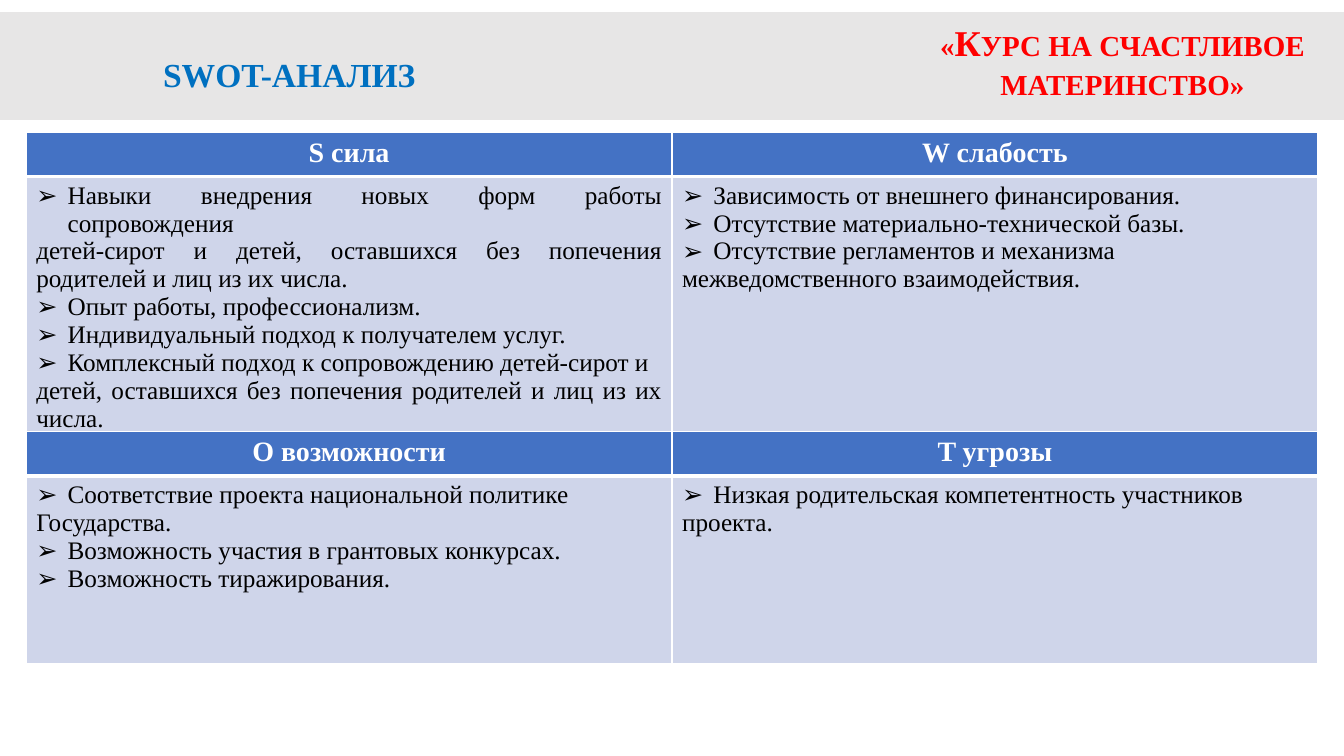
from lxml import etree
from pptx import Presentation
from pptx.dml.color import RGBColor
from pptx.enum import shapes, text
from pptx.oxml import ns
from pptx.util import Cm, Pt

FONT = "Times New Roman"
WHITE = RGBColor(0xFF, 0xFF, 0xFF)
BLACK = RGBColor(0, 0, 0)
GREY = RGBColor(0xE7, 0xE6, 0xE6)
HEADING_BLUE = RGBColor(0x00, 0x70, 0xC0)
RED = RGBColor(0xFF, 0, 0)
HEADER_BLUE = RGBColor(0x44, 0x72, 0xC4)
PALE_BLUE = RGBColor(0xCF, 0xD5, 0xEA)

HANGING = Cm(0.79)
ARROW = "➢"
CENTER = text.PP_ALIGN.CENTER
JUSTIFY = text.PP_ALIGN.JUSTIFY
LEFT = text.PP_ALIGN.LEFT

# Each quadrant: header, alignment, lines; lines led by the arrow are bulleted.
STRENGTHS = ("S сила", JUSTIFY, [
    "➢Навыки внедрения новых форм работы сопровождения",
    "детей-сирот и детей, оставшихся без попечения родителей и лиц из их числа.",
    "➢Опыт работы, профессионализм.",
    "➢Индивидуальный подход к получателем услуг.",
    "➢Комплексный подход к сопровождению детей-сирот и",
    "детей, оставшихся без попечения родителей и лиц из их числа.",
])
WEAKNESSES = ("W слабость", LEFT, [
    "➢Зависимость от внешнего финансирования.",
    "➢Отсутствие материально-технической базы.",
    "➢Отсутствие регламентов и механизма",
    "межведомственного взаимодействия.",
])
OPPORTUNITIES = ("O возможности", LEFT, [
    "➢Соответствие проекта национальной политике",
    "Государства.",
    "➢Возможность участия в грантовых конкурсах.",
    "➢Возможность тиражирования.",
])
THREATS = ("T угрозы", LEFT, [
    "➢Низкая родительская компетентность участников",
    "проекта.",
])


def write(paragraph, wording, size, color, bold, align):
    paragraph.text = wording
    paragraph.alignment = align
    for run in paragraph.runs:
        run.font.name = FONT
        run.font.size = Pt(size)
        run.font.bold = bold
        run.font.color.rgb = color


def add_bullet(paragraph):
    properties = paragraph._p.get_or_add_pPr()
    properties.set("marL", str(HANGING))
    properties.set("indent", str(-HANGING))
    etree.SubElement(properties, ns.qn("a:buFont")).set("typeface", "Arial")
    etree.SubElement(properties, ns.qn("a:buChar")).set("char", ARROW)


def paint_cell(cell, fill, bottom_width):
    """Fill the cell and give it white borders."""
    properties = cell._tc.get_or_add_tcPr()
    for side, width in (("L", 1), ("R", 1), ("T", 1), ("B", bottom_width)):
        border = etree.SubElement(properties, ns.qn(f"a:ln{side}"), w=str(Pt(width)))
        solid = etree.SubElement(border, ns.qn("a:solidFill"))
        etree.SubElement(solid, ns.qn("a:srgbClr"), val=str(WHITE))
    cell.fill.solid()
    cell.fill.fore_color.rgb = fill


def add_quadrants(slide, left, top, width, row_heights, quadrants):
    """Place a table with a header and a body cell for each quadrant."""
    table = slide.shapes.add_table(
        2, len(quadrants), left, top, width, sum(row_heights)).table
    for row, height in zip(table.rows, row_heights):
        row.height = height
    for column, (header, align, lines) in enumerate(quadrants):
        header_cell, body_cell = table.cell(0, column), table.cell(1, column)
        paint_cell(header_cell, HEADER_BLUE, 3)
        write(header_cell.text_frame.paragraphs[0], header, 20, WHITE, True, CENTER)
        paint_cell(body_cell, PALE_BLUE, 1)
        body = body_cell.text_frame
        for number, line in enumerate(lines):
            paragraph = body.add_paragraph() if number else body.paragraphs[0]
            write(paragraph, line.removeprefix(ARROW), 18, BLACK, False, align)
            if line.startswith(ARROW):
                add_bullet(paragraph)


def add_banner(slide, left, top, width, height):
    """Place the grey band with the heading and the project name on it."""
    band = slide.shapes.add_shape(
        shapes.MSO_SHAPE.RECTANGLE, left, top, width, height)
    band.shadow.inherit = False
    band.fill.solid()
    band.fill.fore_color.rgb = GREY
    band.line.color.rgb = GREY
    band.line.width = Pt(1)

    heading = slide.shapes.add_textbox(
        left + Cm(3.86), top + Cm(0.91), Cm(6.93), Cm(1.27)).text_frame
    heading.word_wrap = False
    write(heading.paragraphs[0], "SWOT-АНАЛИЗ", 24, HEADING_BLUE, True, LEFT)

    project = slide.shapes.add_textbox(
        left + Cm(23.16), top + Cm(0.18), Cm(10.26), Cm(2.74)).text_frame
    project.word_wrap = True
    name = project.paragraphs[0]
    write(name, "«Курс на счастливое материнство»", 25.9, RED, True, CENTER)
    name.line_spacing = 0.9
    name.space_before = Pt(10)
    name.runs[0].font._element.set("cap", "small")


def main():
    deck = Presentation()
    deck.slide_width, deck.slide_height = Cm(33.87), Cm(19.05)
    slide = deck.slides.add_slide(deck.slide_layouts[6])
    add_banner(slide, Cm(0), Cm(0.33), deck.slide_width, Cm(2.67))
    margin = Cm(0.66)
    width = deck.slide_width - 2 * margin
    add_quadrants(slide, margin, Cm(3.33), width, (Cm(1.12), Cm(6.32)),
                  (STRENGTHS, WEAKNESSES))
    add_quadrants(slide, margin, Cm(10.87), width, (Cm(1.12), Cm(4.72)),
                  (OPPORTUNITIES, THREATS))
    deck.save("out.pptx")


if __name__ == "__main__":
    main()
